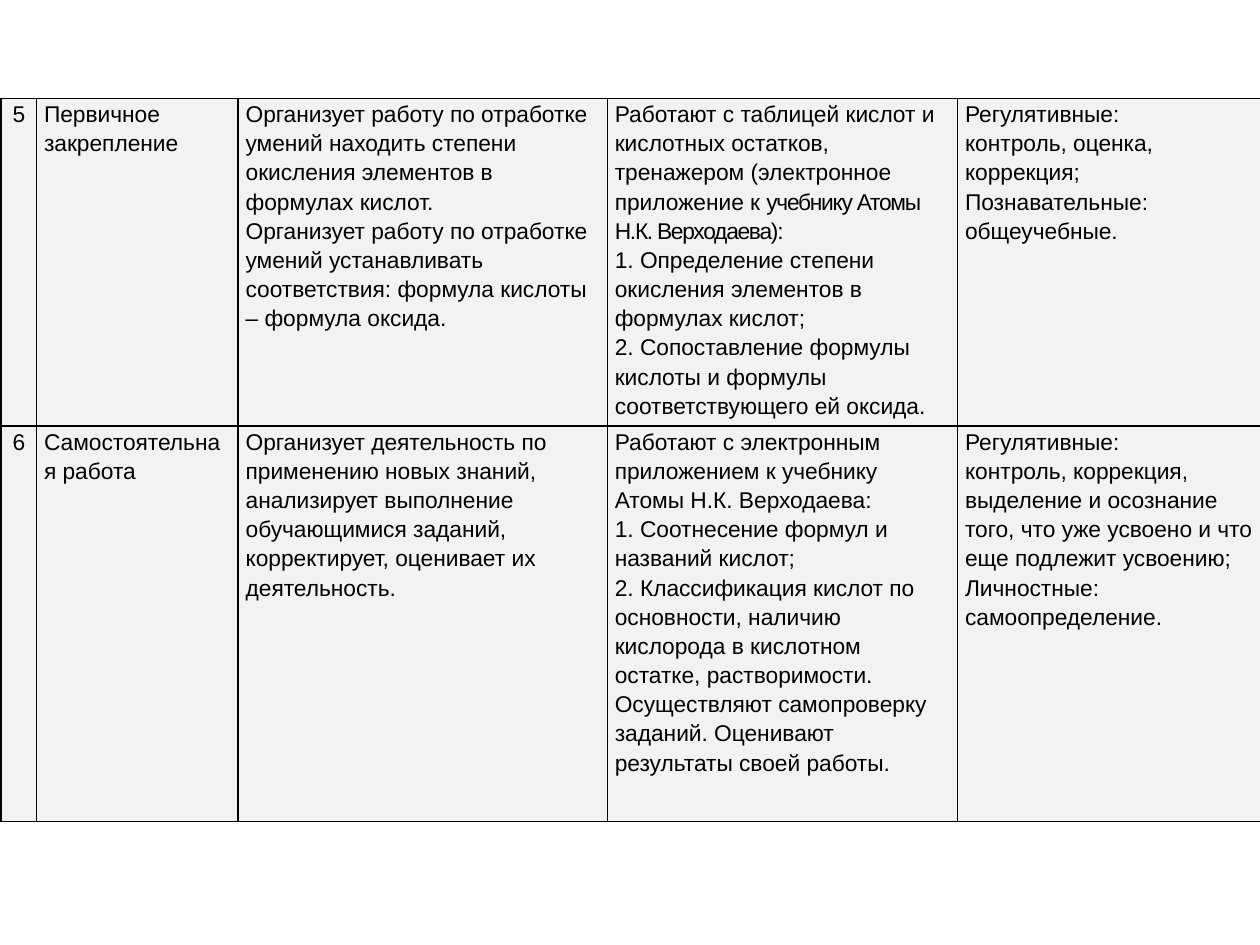
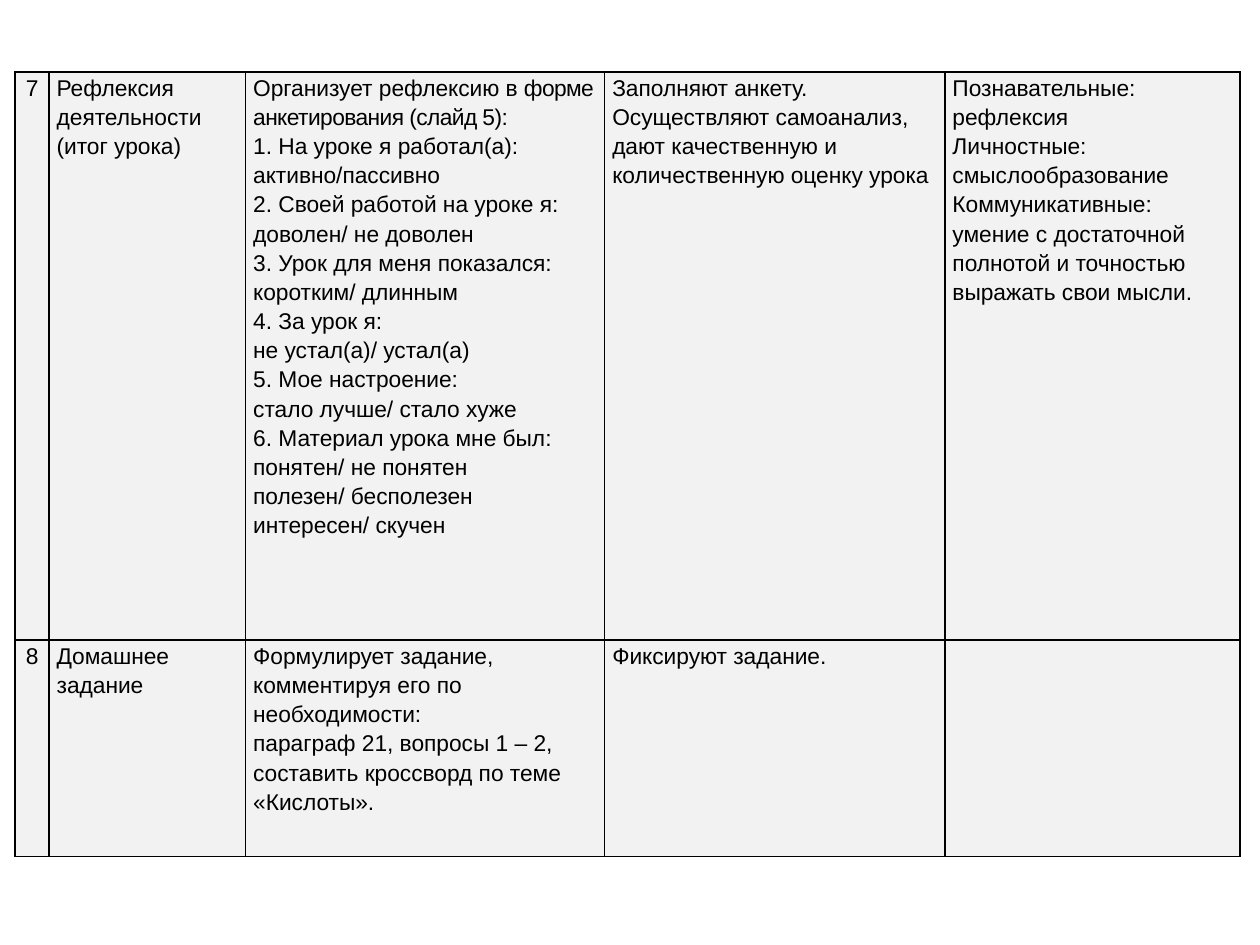
"""Build two slides that tabulate the stages of a chemistry lesson."""
from lxml import etree
from pptx import Presentation
from pptx.dml.color import RGBColor
from pptx.enum.text import PP_ALIGN
from pptx.oxml.ns import qn
from pptx.util import Inches, Pt

CENTER, LEFT = PP_ALIGN.CENTER, PP_ALIGN.LEFT
INK = RGBColor(0x00, 0x00, 0x00)
GRAY = RGBColor(0xF2, 0xF2, 0xF2)
FONT, SIZE, LEAD = "Arial", 13, 1.15
PAD, RULE = 0.06, 1
TIGHT = "|"
BOOK = "Атомы Н.К. Верходаева"

SLIDES = [
    {
        "left": 0.01, "top": 0.78, "track": -0.7,
        "cols": [0.28, 1.6, 2.93, 2.78, 2.41],
        "rows": [2.6, 3.14],
        "steps": [
            [
                ["5"],
                ["Первичное закрепление"],
                ["Организует работу по отработке умений находить степени "
                 "окисления элементов в формулах кислот.",
                 "Организует работу по отработке умений устанавливать "
                 "соответствия: формула кислоты – формула оксида."],
                ["Работают с таблицей кислот и кислотных остатков, "
                 "тренажером (электронное приложение к "
                 f"|учебнику {BOOK}):",
                 "1. Определение степени окисления элементов в формулах "
                 "кислот;",
                 "2. Сопоставление формулы кислоты и формулы "
                 "соответствующего ей оксида."],
                ["Регулятивные:",
                 "контроль, оценка, коррекция;",
                 "Познавательные: общеучебные."],
            ],
            [
                ["6"],
                ["Самостоятельная работа"],
                ["Организует деятельность по применению новых знаний, "
                 "анализирует выполнение обучающимися заданий, "
                 "корректирует, оценивает их деятельность."],
                [f"Работают с электронным приложением к учебнику {BOOK}:",
                 "1. Соотнесение формул и названий кислот;",
                 "2. Классификация кислот по основности, наличию кислорода "
                 "в кислотном остатке, растворимости.",
                 "Осуществляют самопроверку заданий. Оценивают результаты "
                 "своей работы."],
                ["Регулятивные:",
                 "контроль, коррекция, выделение и осознание того, что уже "
                 "усвоено и что еще подлежит усвоению;",
                 "Личностные: самоопределение."],
            ],
        ],
    },
    {
        "left": 0.12, "top": 0.57, "track": -0.3,
        "cols": [0.27, 1.56, 2.85, 2.7, 2.34],
        "rows": [4.51, 1.72],
        "steps": [
            [
                ["7"],
                ["Рефлексия деятельности", "(итог урока)"],
                ["Организует рефлексию в |форме анкетирования (слайд 5):",
                 "1. На уроке я работал(а):",
                 "активно/пассивно",
                 "2. Своей работой на уроке я:",
                 "доволен/ не доволен",
                 "3. Урок для меня показался:",
                 "коротким/ длинным",
                 "4. За урок я:",
                 "не устал(а)/ устал(а)",
                 "5. Мое настроение:",
                 "стало лучше/ стало хуже",
                 "6. Материал урока мне был:",
                 "понятен/ не понятен",
                 "полезен/ бесполезен",
                 "интересен/ скучен"],
                ["Заполняют анкету.",
                 "Осуществляют самоанализ, дают качественную и "
                 "количественную оценку урока"],
                ["Познавательные:",
                 "рефлексия",
                 "Личностные: смыслообразование",
                 "Коммуникативные:",
                 "умение с достаточной полнотой и точностью выражать свои "
                 "мысли."],
            ],
            [
                ["8"],
                ["Домашнее задание"],
                ["Формулирует задание, комментируя его по необходимости:",
                 "параграф 21, вопросы 1 – 2, составить кроссворд по теме "
                 "«Кислоты»."],
                ["Фиксируют задание."],
                [],
            ],
        ],
    },
]


def frame(cell):
    props = cell._tc.get_or_add_tcPr()
    for side in ("lnL", "lnR", "lnT", "lnB"):
        line = etree.SubElement(props, qn(f"a:{side}"), w=str(Pt(RULE)))
        fill = etree.SubElement(line, qn("a:solidFill"))
        etree.SubElement(fill, qn("a:srgbClr"), val=str(INK))
    cell.fill.solid()
    cell.fill.fore_color.rgb = GRAY


def write(cell, lines, align, track):
    cell.margin_left = cell.margin_right = Inches(PAD)
    cell.margin_top = cell.margin_bottom = 0
    cell.text_frame.text = "\n".join(lines)
    for para in cell.text_frame.paragraphs:
        para.alignment, para.line_spacing = align, LEAD
        head, mark, tail = para.text.partition(TIGHT)
        if mark:
            para.text = head
            run = para.add_run()
            run.text = tail
            run.font._element.set("spc", str(round(track * 100)))
        for run in para.runs:
            run.font.name, run.font.size = FONT, Pt(SIZE)
            run.font.color.rgb = INK


def build(deck, data):
    slide = deck.slides.add_slide(deck.slide_layouts[6])
    cols, rows = data["cols"], data["rows"]
    table = slide.shapes.add_table(
        len(rows), len(cols), Inches(data["left"]), Inches(data["top"]),
        Inches(sum(cols)), Inches(sum(rows))).table
    table.first_row = table.horz_banding = False
    for col, width in zip(table.columns, cols):
        col.width = Inches(width)
    for row, height, step in zip(table.rows, rows, data["steps"]):
        row.height = Inches(height)
        for i, (cell, lines) in enumerate(zip(row.cells, step)):
            frame(cell)
            write(cell, lines, LEFT if i else CENTER, data["track"])


def main():
    deck = Presentation()
    deck.slide_width, deck.slide_height = Inches(10), Inches(7.5)
    for data in SLIDES:
        build(deck, data)
    deck.save("out.pptx")


if __name__ == "__main__":
    main()
